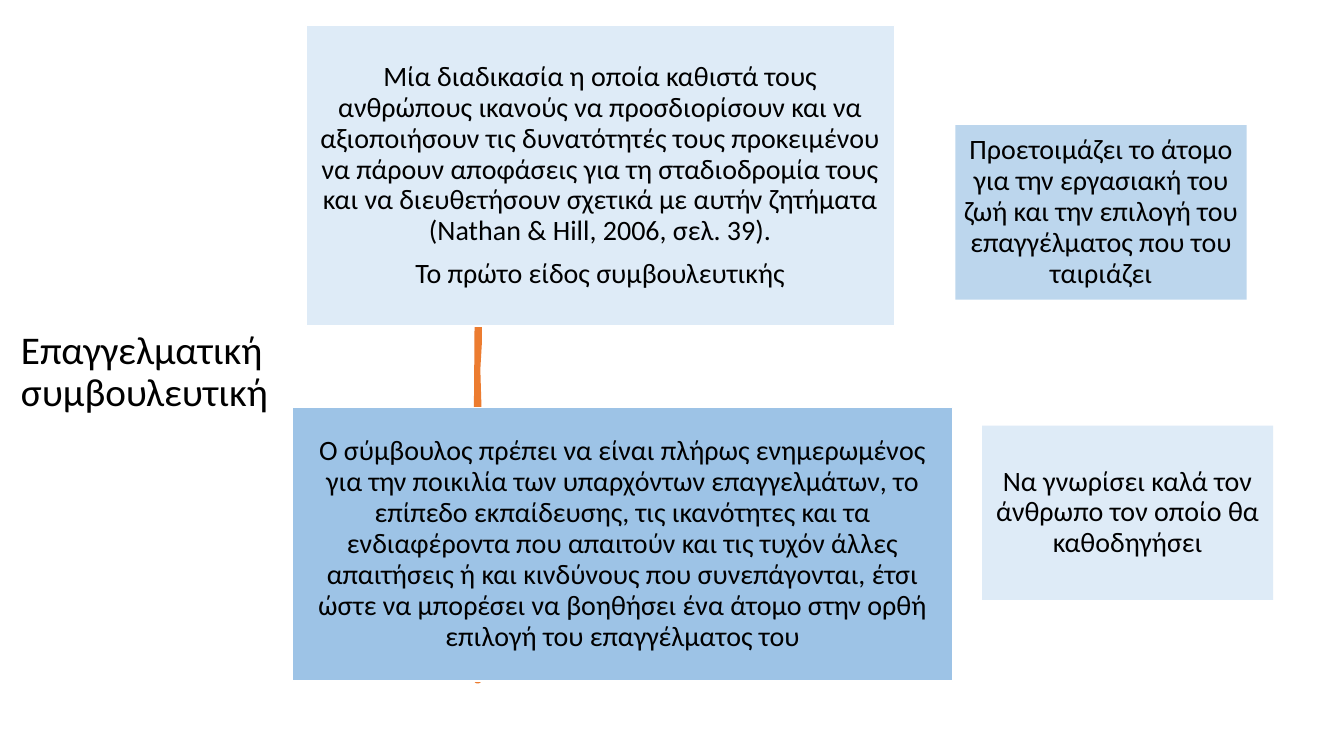
import pptx
import pptx.dml.color
import pptx.enum.shapes
import pptx.enum.text
import pptx.util

Pt = pptx.util.Pt
RGBColor = pptx.dml.color.RGBColor
MIDDLE = pptx.enum.text.MSO_ANCHOR.MIDDLE
TOP = pptx.enum.text.MSO_ANCHOR.TOP
CENTER = pptx.enum.text.PP_ALIGN.CENTER
LEFT = pptx.enum.text.PP_ALIGN.LEFT

BLACK = RGBColor(0x00, 0x00, 0x00)
WHITE = RGBColor(0xFF, 0xFF, 0xFF)
ORANGE = RGBColor(0xEC, 0x7C, 0x30)
PALE_BLUE = RGBColor(0xDE, 0xEB, 0xF7)
LIGHT_BLUE = RGBColor(0xBC, 0xD6, 0xED)
MID_BLUE = RGBColor(0x9D, 0xC3, 0xE6)

TITLE = "Επαγγελματική συμβουλευτική"
DEFINITION = [
    "Μία διαδικασία η οποία καθιστά τους ανθρώπους ικανούς να προσδιορίσουν "
    "και να αξιοποιήσουν τις δυνατότητές τους προκειμένου να πάρουν αποφάσεις "
    "για τη σταδιοδρομία τους και να διευθετήσουν σχετικά με αυτήν ζητήματα "
    "(Nathan & Hill, 2006, σελ. 39).",
    "Το πρώτο είδος συμβουλευτικής",
]
COUNSELLOR = [
    "Ο σύμβουλος πρέπει να είναι πλήρως ενημερωμένος για την ποικιλία των "
    "υπαρχόντων επαγγελμάτων, το επίπεδο εκπαίδευσης, τις ικανότητες και τα "
    "ενδιαφέροντα που απαιτούν και τις τυχόν άλλες απαιτήσεις ή και κινδύνους "
    "που συνεπάγονται, έτσι ώστε να μπορέσει να βοηθήσει ένα άτομο στην ορθή "
    "επιλογή του επαγγέλματος του",
]
PREPARATION = [
    "Προετοιμάζει το άτομο για την εργασιακή του ζωή και την επιλογή του "
    "επαγγέλματος που του ταιριάζει",
]
KNOWLEDGE = ["Να γνωρίσει καλά τον άνθρωπο τον οποίο θα καθοδηγήσει"]


def set_frame(frame, anchor, side_inset):
    frame.word_wrap = True
    frame.auto_size = pptx.enum.text.MSO_AUTO_SIZE.NONE
    frame.vertical_anchor = anchor
    frame.margin_left = frame.margin_right = Pt(side_inset)
    frame.margin_top = frame.margin_bottom = 0


def format_para(para, size, align, line_spacing, space_before=0):
    para.alignment = align
    para.line_spacing = line_spacing
    para.space_before = Pt(space_before)
    for span in para.runs:
        span.font.name = "Calibri"
        span.font.size = Pt(size)
        span.font.color.rgb = BLACK


def add_title(page):
    title = page.shapes.title
    title.left, title.top, title.width, title.height = Pt(15), Pt(235.5), Pt(185), Pt(62)
    set_frame(title.text_frame, TOP, 0)
    title.text_frame.text = TITLE
    format_para(title.text_frame.paragraphs[0], 28, LEFT, Pt(30.2))


def add_brush_stroke(page):
    # Left and right edges of a slightly wavy vertical stroke
    left_edge = [(340.8, 60.5), (340, 125), (340.8, 205), (340.5, 250), (340, 310),
                 (340, 380), (340.8, 430), (340.5, 486.5)]
    right_edge = [(342, 486.5), (341.5, 424), (343.2, 390), (341, 330), (342.6, 300),
                  (341.5, 264), (342.6, 245), (342, 160), (341.3, 115), (342.6, 82), (342, 60.5)]
    points = [(Pt(x), Pt(y)) for x, y in left_edge + right_edge]
    builder = page.shapes.build_freeform(*points[0])
    builder.add_line_segments(points[1:], close=True)
    stroke = builder.convert_to_shape()
    stroke.shadow.inherit = False
    stroke.fill.solid()
    stroke.fill.fore_color.rgb = ORANGE
    stroke.line.color.rgb = ORANGE
    stroke.line.width = Pt(3.25)


def add_panel(page, left, top, width, height, color, texts, side_inset, outlined=False):
    box = page.shapes.add_shape(pptx.enum.shapes.MSO_SHAPE.RECTANGLE,
                                Pt(left), Pt(top), Pt(width), Pt(height))
    box.shadow.inherit = False
    box.fill.solid()
    box.fill.fore_color.rgb = color
    if outlined:
        box.line.color.rgb = WHITE
        box.line.width = Pt(1)
    else:
        box.line.fill.background()
    set_frame(box.text_frame, MIDDLE, side_inset)
    box.text_frame.text = "\n".join(texts)
    for index, para in enumerate(box.text_frame.paragraphs):
        format_para(para, 20, CENTER, 0.92, 8.5 if index else 0)


def main():
    deck = pptx.Presentation()
    deck.slide_width, deck.slide_height = Pt(960), Pt(540)
    page = deck.slides.add_slide(deck.slide_layouts[5])

    add_title(page)
    add_brush_stroke(page)

    # Main panels, over the stroke
    add_panel(page, 218.5, 18, 420.5, 215, PALE_BLUE, DEFINITION, 9, outlined=True)
    add_panel(page, 209, 291, 471.5, 195.5, MID_BLUE, COUNSELLOR, 15, outlined=True)

    # Side notes
    add_panel(page, 682.5, 89.5, 208, 124.5, LIGHT_BLUE, PREPARATION, 4)
    add_panel(page, 701.5, 304, 208, 124.5, PALE_BLUE, KNOWLEDGE, 4)

    deck.save("out.pptx")


if __name__ == "__main__":
    main()
